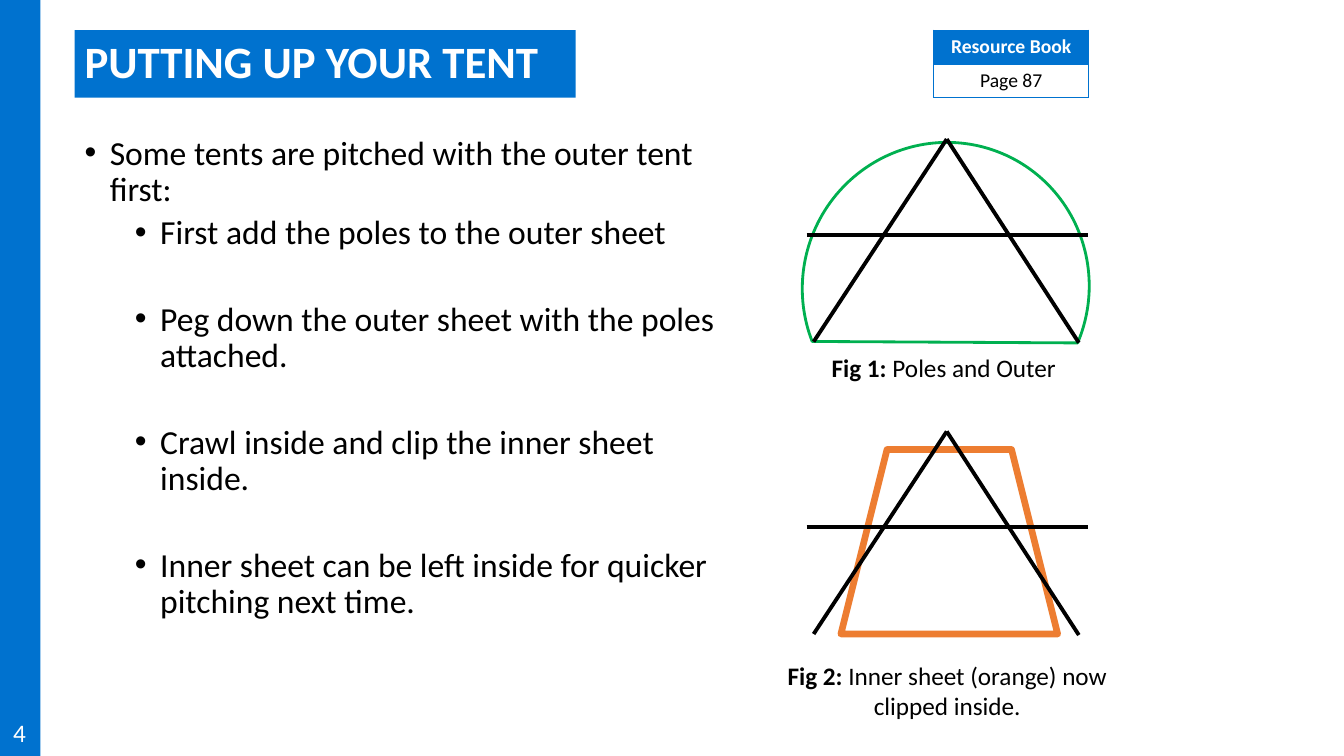
from lxml import etree
from pptx import Presentation
from pptx.dml.color import RGBColor
from pptx.enum.shapes import MSO_CONNECTOR, MSO_SHAPE
from pptx.enum.text import MSO_ANCHOR, PP_ALIGN
from pptx.oxml.ns import qn
from pptx.util import Inches, Pt

CENTER, LEFT = PP_ALIGN.CENTER, PP_ALIGN.LEFT
TOP, MIDDLE = MSO_ANCHOR.TOP, MSO_ANCHOR.MIDDLE
RECTANGLE, CHORD, TRAPEZOID = MSO_SHAPE.RECTANGLE, MSO_SHAPE.CHORD, MSO_SHAPE.TRAPEZOID
STRAIGHT = MSO_CONNECTOR.STRAIGHT

FONT = "Calibri"
BLUE, WHITE, BLACK = "0072CF", "FFFFFF", "000000"
GREEN, ORANGE = "00B050", "ED7D31"

# Level, space before in points, wording
STEPS = [
    (0, 0, "Some tents are pitched with the outer tent first:"),
    (1, 5, "First add the poles to the outer sheet"),
    (1, 36, "Peg down the outer sheet with the poles attached."),
    (1, 36, "Crawl inside and clip the inner sheet inside."),
    (1, 36, "Inner sheet can be left inside for quicker pitching next time."),
]


def rgb(color):
    return RGBColor.from_string(color)


def write(paragraph, text, size=18, color=BLACK, bold=False, align=LEFT):
    """Add one formatted run to the paragraph."""
    paragraph.alignment = align
    run = paragraph.add_run()
    run.text = text
    run.font.name, run.font.size, run.font.bold = FONT, Pt(size), bold
    run.font.color.rgb = rgb(color)


def add_text_frame(slide, box, anchor=TOP):
    frame = slide.shapes.add_textbox(*map(Inches, box)).text_frame
    frame.word_wrap = True
    frame.vertical_anchor = anchor
    return frame


def add_figure_shape(slide, preset, box, fill=None, line=None, width=1):
    shape = slide.shapes.add_shape(preset, *map(Inches, box))
    shape.shadow.inherit = False
    if fill:
        shape.fill.solid()
        shape.fill.fore_color.rgb = rgb(fill)
    else:
        shape.fill.background()
    if line:
        shape.line.color.rgb = rgb(line)
        shape.line.width = Pt(width)
    else:
        shape.line.fill.background()
    return shape


def add_side_band(slide, width, height, number):
    add_figure_shape(slide, RECTANGLE, (0, 0, width, height), fill=BLUE)
    frame = add_text_frame(slide, (-0.07, height - 0.43, 0.53, 0.4))
    write(frame.paragraphs[0], number, color=WHITE, align=CENTER)


def add_title(slide, box, text):
    banner = add_figure_shape(slide, RECTANGLE, box, fill=BLUE)
    frame = banner.text_frame
    frame.word_wrap = True
    frame.vertical_anchor = MIDDLE
    frame.paragraphs[0].line_spacing = 0.9
    write(frame.paragraphs[0], text, size=32, color=WHITE, bold=True)


def add_bullet(paragraph, level):
    properties = paragraph._p.get_or_add_pPr()
    properties.set("marL", str(Inches(0.25 + 0.5 * level)))
    properties.set("indent", str(Inches(-0.25)))
    etree.SubElement(properties, qn("a:buFont")).set("typeface", "Arial")
    etree.SubElement(properties, qn("a:buChar")).set("char", "•")


def add_steps(slide, box, steps):
    frame = add_text_frame(slide, box)
    for index, (level, gap, text) in enumerate(steps):
        paragraph = frame.add_paragraph() if index else frame.paragraphs[0]
        add_bullet(paragraph, level)
        paragraph.level = level
        paragraph.line_spacing = 0.9
        paragraph.space_before = Pt(gap)
        write(paragraph, text, size=24)


def add_cell_borders(cell, color):
    properties = cell._tc.get_or_add_tcPr()
    for position, side in enumerate(("a:lnL", "a:lnR", "a:lnT", "a:lnB")):
        border = etree.Element(qn(side), w=str(Pt(1)))
        fill = etree.SubElement(border, qn("a:solidFill"))
        etree.SubElement(fill, qn("a:srgbClr")).set("val", color)
        properties.insert(position, border)


def add_resource_table(slide, box):
    table = slide.shapes.add_table(2, 1, *map(Inches, box)).table
    rows = [("Resource Book", BLUE, WHITE, True), ("Page 87", WHITE, BLACK, False)]
    for index, (text, fill, color, bold) in enumerate(rows):
        cell = table.cell(index, 0)
        cell.fill.solid()
        cell.fill.fore_color.rgb = rgb(fill)
        write(cell.text_frame.paragraphs[0], text, size=14, color=color,
              bold=bold, align=CENTER)
        add_cell_borders(cell, BLUE)


def add_poles(slide, left, top):
    """Draw two poles meeting at the apex and the crossbar over them."""
    apex = (1.39, 0)
    for start, end in [((0, 0.95), (2.79, 0.95)), ((0.07, 2.01), apex), (apex, (2.7, 2.02))]:
        pole = slide.shapes.add_connector(
            STRAIGHT, Inches(left + start[0]), Inches(top + start[1]),
            Inches(left + end[0]), Inches(top + end[1]))
        pole.line.color.rgb = rgb(BLACK)
        pole.line.width = Pt(2.75)
        etree.SubElement(pole._element.spPr, qn("a:effectLst"))


def add_caption(slide, box, label, text, align):
    paragraph = add_text_frame(slide, box).paragraphs[0]
    write(paragraph, label, bold=True, align=align)
    write(paragraph, text, align=align)


def add_outer_figure(slide, left, top):
    sheet = add_figure_shape(slide, CHORD, (left - 0.06, top + 0.05, 2.88, 2.84),
                             line=GREEN, width=2)
    sheet.rotation = 112.9
    add_poles(slide, left, top)
    add_caption(slide, (left + 0.15, top + 2.07, 2.63, 0.4),
                "Fig 1: ", "Poles and Outer", LEFT)


def add_inner_figure(slide, left, top):
    add_figure_shape(slide, TRAPEZOID, (left + 0.34, top + 0.18, 2.15, 1.83),
                     line=ORANGE, width=4.75)
    add_poles(slide, left, top)
    add_caption(slide, (left - 0.31, top + 2.22, 3.41, 0.71),
                "Fig 2: ", "Inner sheet (orange) now clipped inside.", CENTER)


def main():
    deck = Presentation()
    deck.slide_width, deck.slide_height = Inches(13.33), Inches(7.5)
    slide = deck.slides.add_slide(deck.slide_layouts[6])
    add_side_band(slide, 0.4, 7.5, "4")
    add_title(slide, (0.74, 0.3, 4.97, 0.67), "PUTTING UP YOUR TENT")
    add_steps(slide, (0.74, 1.3, 6.69, 6.2), STEPS)
    add_resource_table(slide, (9.26, 0.3, 1.54, 0.67))
    add_outer_figure(slide, 8, 1.38)
    add_inner_figure(slide, 8, 4.28)
    deck.save("out.pptx")


if __name__ == "__main__":
    main()
